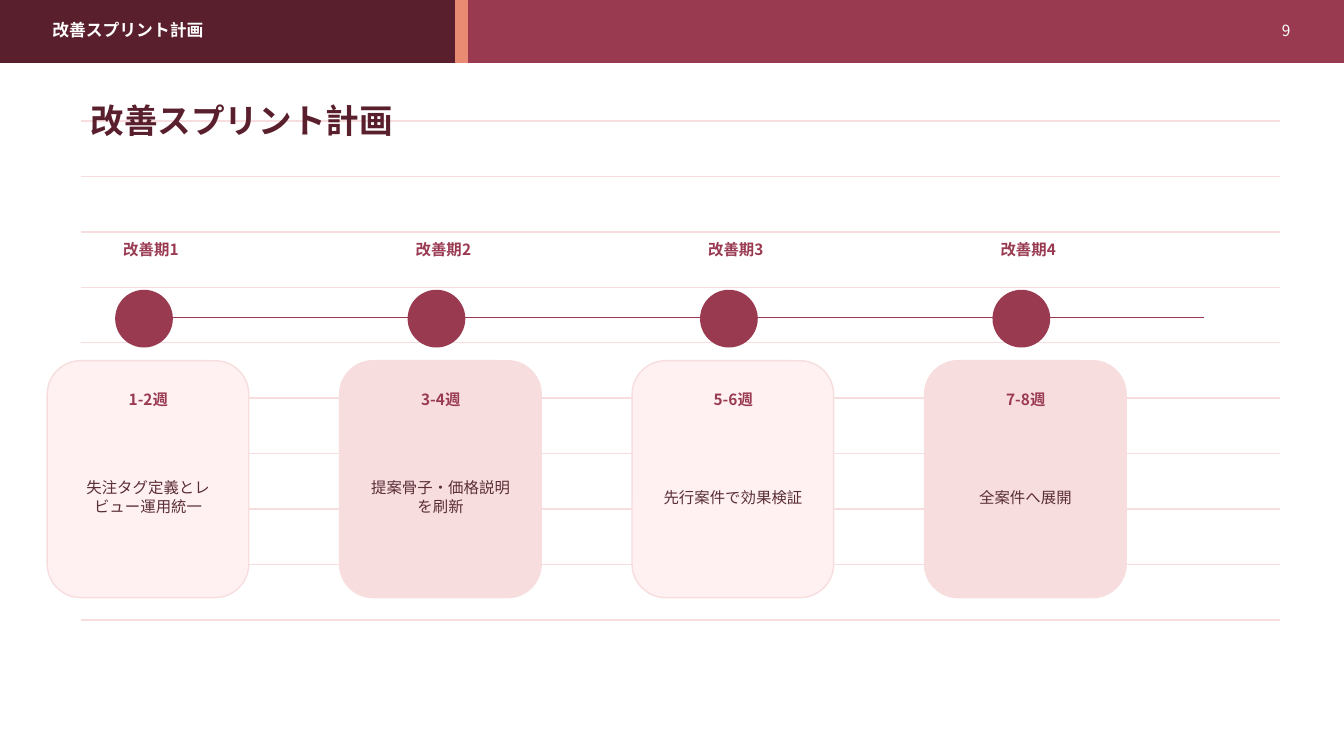
from lxml.etree import SubElement
from pptx import Presentation
from pptx.dml.color import RGBColor
from pptx.enum.shapes import MSO_CONNECTOR, MSO_SHAPE
from pptx.enum.text import MSO_ANCHOR, PP_ALIGN
from pptx.oxml.ns import qn
from pptx.util import Cm, Pt

# Content
TITLE = "改善スプリント計画"
PAGE = "9"
SPRINTS = [
    ("改善期1", "1-2週", "失注タグ定義とレビュー運用統一"),
    ("改善期2", "3-4週", "提案骨子・価格説明を刷新"),
    ("改善期3", "5-6週", "先行案件で効果検証"),
    ("改善期4", "7-8週", "全案件へ展開"),
]

COLORS = {
    "wine": "9A3A51", "dark": "5A1F2D", "coral": "E98A73", "rose": "F7DDDE",
    "blush": "FFF1F1", "body": "5A2E37", "white": "FFFFFF",
}
BODY_FONT, TITLE_FONT = "Noto Sans CJK JP", "League Spartan"

# Layout in cm
WIDTH, HEIGHT = 33.87, 19.05
BAR_HEIGHT = 1.57
RULE_COUNT, RULE_TOP, RULE_BOTTOM = 10, 3.05, 15.62
RULE_LEFT, RULE_RIGHT = 2.03, 32.26
COLUMN_LEFT, COLUMN_STEP = 1.19, 7.37

prs = Presentation()
prs.slide_width, prs.slide_height = Cm(WIDTH), Cm(HEIGHT)
s = prs.slides.add_slide(prs.slide_layouts[6])


def rgb(name):
    return RGBColor.from_string(COLORS[name])


def add_line(x1, x2, y, color):
    line = s.shapes.add_connector(MSO_CONNECTOR.STRAIGHT, Cm(x1), Cm(y), Cm(x2), Cm(y))
    line.line.color.rgb = rgb(color)
    line.line.width = Pt(1)
    SubElement(line._element.spPr, qn("a:effectLst"))


def add_block(kind, x, y, w, h, fill, outline=None):
    sp = s.shapes.add_shape(kind, Cm(x), Cm(y), Cm(w), Cm(h))
    sp.shadow.inherit = False
    sp.fill.solid()
    sp.fill.fore_color.rgb = rgb(fill)
    sp.line.color.rgb = rgb(outline or fill)
    sp.line.width = Pt(1)


def add_text(text, x, y, w, h, size=11, color="wine", bold=False,
             align=PP_ALIGN.CENTER, font=BODY_FONT):
    tf = s.shapes.add_textbox(Cm(x), Cm(y), Cm(w), Cm(h)).text_frame
    tf.word_wrap = True
    tf.vertical_anchor = MSO_ANCHOR.MIDDLE
    p = tf.paragraphs[0]
    p.alignment = align
    r = p.add_run()
    r.text = text
    r.font.name, r.font.size, r.font.bold = font, Pt(size), bold
    r.font.color.rgb = rgb(color)
    SubElement(r.font._element, qn("a:ea"), typeface=font)


# Ruled background
for i in range(RULE_COUNT):
    y = RULE_TOP + i * (RULE_BOTTOM - RULE_TOP) / (RULE_COUNT - 1)
    add_line(RULE_LEFT, RULE_RIGHT, y, "rose")

# Header bar and title
for x, w, color in [(0, WIDTH, "wine"), (0, 11.68, "dark"), (11.48, 0.3, "coral")]:
    add_block(MSO_SHAPE.RECTANGLE, x, 0, w, BAR_HEIGHT, color)
add_text(TITLE, 1.07, 0.43, 22.35, 0.66, size=12, color="white", bold=True,
         align=PP_ALIGN.LEFT)
add_text(PAGE, 30.86, 0.43, 1.91, 0.66, color="white", align=PP_ALIGN.RIGHT)
add_text(TITLE, RULE_LEFT, 2.41, 28.96, 1.22, size=24, color="dark", bold=True,
         align=PP_ALIGN.LEFT, font=TITLE_FONT)

# Timeline with one marker and card per sprint
add_line(3.43, 30.35, 8, "wine")
for i, (sprint, weeks, task) in enumerate(SPRINTS):
    x = COLUMN_LEFT + i * COLUMN_STEP
    add_block(MSO_SHAPE.OVAL, x + 1.73, 7.32, 1.42, 1.42, "wine")
    add_text(sprint, x + 1.47, 5.99, 2.29, 0.61, bold=True)
    add_block(MSO_SHAPE.ROUNDED_RECTANGLE, x, 9.09, 5.08, 5.97,
              "rose" if i % 2 else "blush", outline="rose")
    add_text(weeks, x + 0.58, 9.78, 3.94, 0.56, bold=True)
    add_text(task, x + 0.36, 10.62, 4.37, 3.81, color="body")

prs.save("out.pptx")
